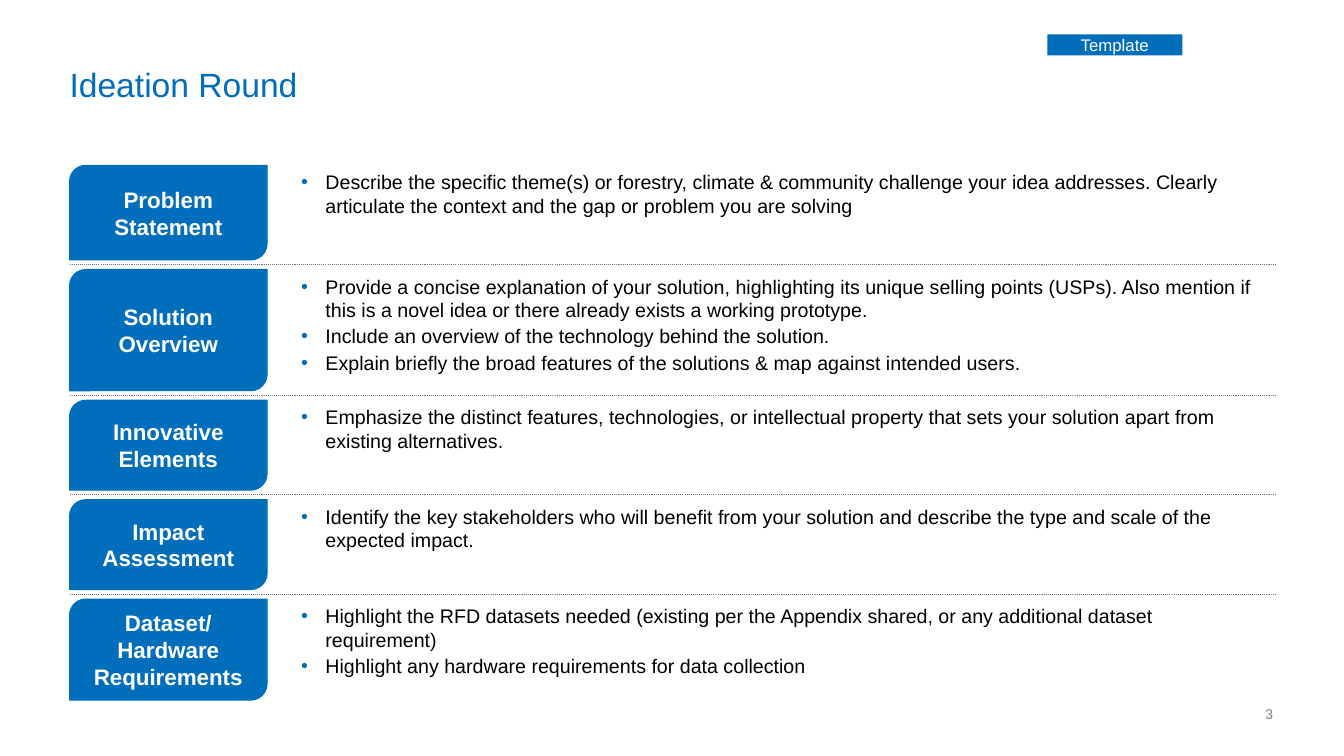
from lxml import etree
from pptx import Presentation
from pptx.dml.color import RGBColor
from pptx.enum.dml import MSO_LINE
from pptx.enum.shapes import MSO_CONNECTOR, MSO_SHAPE
from pptx.enum.text import MSO_ANCHOR, MSO_AUTO_SIZE, PP_ALIGN
from pptx.oxml.ns import qn
from pptx.util import Pt

STRAIGHT = MSO_CONNECTOR.STRAIGHT
RECTANGLE = MSO_SHAPE.RECTANGLE
ROUND_DIAGONAL = MSO_SHAPE.ROUND_2_DIAG_RECTANGLE
DOTTED = MSO_LINE.ROUND_DOT
LEFT, CENTER, RIGHT = PP_ALIGN.LEFT, PP_ALIGN.CENTER, PP_ALIGN.RIGHT
TOP, MIDDLE, BOTTOM = MSO_ANCHOR.TOP, MSO_ANCHOR.MIDDLE, MSO_ANCHOR.BOTTOM
NO_AUTOFIT = MSO_AUTO_SIZE.NONE

BLUE, WHITE, BLACK = "006EBA", "FFFFFF", "000000"
DIVIDER_GREY, NUMBER_GREY = "6E6F73", "808080"

# Layout in points
MARGIN, CONTENT_WIDTH = 49.7, 861.1
HEADING_WIDTH, CORNER_RADIUS = 141.1, 11.55
PROMPT_LEFT, PROMPT_WIDTH = 200.2, 710.6
FIRST_ROW_TOP, ROW_GAP = 118.1, 6.8
BULLET_INDENT, BULLET_HANG = 25.2, 17.3

# Heading, row height, prompts
SECTIONS = [
    ("Problem Statement", 67.6, [
        "Describe the specific theme(s) or forestry, climate & community challenge your idea "
        "addresses. Clearly articulate the context and the gap or problem you are solving"]),
    ("Solution Overview", 86.6, [
        "Provide a concise explanation of your solution, highlighting its unique selling points "
        "(USPs). Also mention if this is a novel idea or there already exists a working prototype.",
        "Include an overview of the technology behind the solution.",
        "Explain briefly the broad features of the solutions & map against intended users."]),
    ("Innovative Elements", 64.2, [
        "Emphasize the distinct features, technologies, or intellectual property that sets your "
        "solution apart from existing alternatives."]),
    ("Impact Assessment", 64.2, [
        "Identify the key stakeholders who will benefit from your solution and describe the type "
        "and scale of the expected impact."]),
    ("Dataset/\nHardware Requirements", 72.2, [
        "Highlight the RFD datasets needed (existing per the Appendix shared, or any additional "
        "dataset requirement)",
        "Highlight any hardware requirements for data collection"]),
]


def rgb(hex_code):
    return RGBColor.from_string(hex_code)


def place(shape, left, top, width, height):
    shape.left, shape.top = Pt(left), Pt(top)
    shape.width, shape.height = Pt(width), Pt(height)


def format_frame(frame, anchor, padded=True):
    frame.word_wrap = True
    frame.auto_size = NO_AUTOFIT
    frame.vertical_anchor = anchor
    if not padded:
        frame.margin_left = frame.margin_right = 0
        frame.margin_top = frame.margin_bottom = 0


def write(paragraph, text, size, color, align=LEFT, bold=False):
    paragraph.text = text
    paragraph.alignment = align
    font = paragraph.font
    font.name, font.size, font.bold = "Arial", Pt(size), bold
    font.color.rgb = rgb(color)


def add_bullet(paragraph):
    properties = paragraph._p.get_or_add_pPr()
    properties.set("marL", str(Pt(BULLET_INDENT)))
    properties.set("indent", str(-Pt(BULLET_HANG)))
    bullet_color = etree.SubElement(properties, qn("a:buClr"))
    etree.SubElement(bullet_color, qn("a:srgbClr"), val=BLUE)
    etree.SubElement(properties, qn("a:buFont"), typeface="Arial")
    etree.SubElement(properties, qn("a:buChar"), char="•")


def add_title(slide, text):
    title = slide.shapes.title
    place(title, MARGIN, 49, CONTENT_WIDTH, 25.9)
    format_frame(title.text_frame, TOP, padded=False)
    paragraph = title.text_frame.paragraphs[0]
    write(paragraph, text, 24, BLUE)
    paragraph.line_spacing = 0.9


def add_block(slide, preset, left, top, width, height):
    block = slide.shapes.add_shape(preset, Pt(left), Pt(top), Pt(width), Pt(height))
    block.shadow.inherit = False
    block.fill.solid()
    block.fill.fore_color.rgb = rgb(BLUE)
    return block


def add_tag(slide, text):
    tag = add_block(slide, RECTANGLE, 748.1, 24.5, 96.5, 15.1)
    tag.line.fill.background()
    format_frame(tag.text_frame, MIDDLE, padded=False)
    write(tag.text_frame.paragraphs[0], text, 12, WHITE, CENTER)


def add_heading(slide, text, top, height):
    heading = add_block(slide, ROUND_DIAGONAL, MARGIN, top, HEADING_WIDTH, height)
    heading.adjustments[0] = CORNER_RADIUS / height
    heading.line.color.rgb = rgb(BLUE)
    heading.line.width = Pt(0.75)
    format_frame(heading.text_frame, MIDDLE)
    write(heading.text_frame.paragraphs[0], text, 16, WHITE, CENTER, bold=True)


def add_prompts(slide, prompts, top, height):
    box = slide.shapes.add_textbox(Pt(PROMPT_LEFT), Pt(top), Pt(PROMPT_WIDTH), Pt(height))
    frame = box.text_frame
    format_frame(frame, TOP)
    for index, prompt in enumerate(prompts):
        paragraph = frame.add_paragraph() if index else frame.paragraphs[0]
        add_bullet(paragraph)
        write(paragraph, prompt, 14, BLACK)
        paragraph.space_before = Pt(1 if index else 0)
        paragraph.space_after = Pt(1)


def add_divider(slide, y):
    divider = slide.shapes.add_connector(
        STRAIGHT, Pt(MARGIN), Pt(y), Pt(MARGIN + CONTENT_WIDTH), Pt(y))
    divider.line.color.rgb = rgb(DIVIDER_GREY)
    divider.line.width = Pt(0.75)
    divider.line.dash_style = DOTTED
    etree.SubElement(divider._element.spPr, qn("a:effectLst"))


def add_page_number(slide, number):
    box = slide.shapes.add_textbox(Pt(879.1), Pt(504), Pt(30.2), Pt(12.2))
    format_frame(box.text_frame, BOTTOM, padded=False)
    write(box.text_frame.paragraphs[0], number, 10, NUMBER_GREY, RIGHT)


def main():
    presentation = Presentation()
    presentation.slide_width, presentation.slide_height = Pt(960), Pt(540)
    slide = presentation.slides.add_slide(presentation.slide_layouts.get_by_name("Title Only"))

    # Title and tag
    add_title(slide, "Ideation Round")
    add_tag(slide, "Template")

    # Section rows with a divider in each gap
    top = FIRST_ROW_TOP
    for index, (heading, height, prompts) in enumerate(SECTIONS):
        if index:
            add_divider(slide, top - ROW_GAP / 2)
        add_heading(slide, heading, top, height)
        add_prompts(slide, prompts, top, height)
        top += height + ROW_GAP

    # Footer
    add_page_number(slide, "3")
    presentation.save("out.pptx")


if __name__ == "__main__":
    main()
